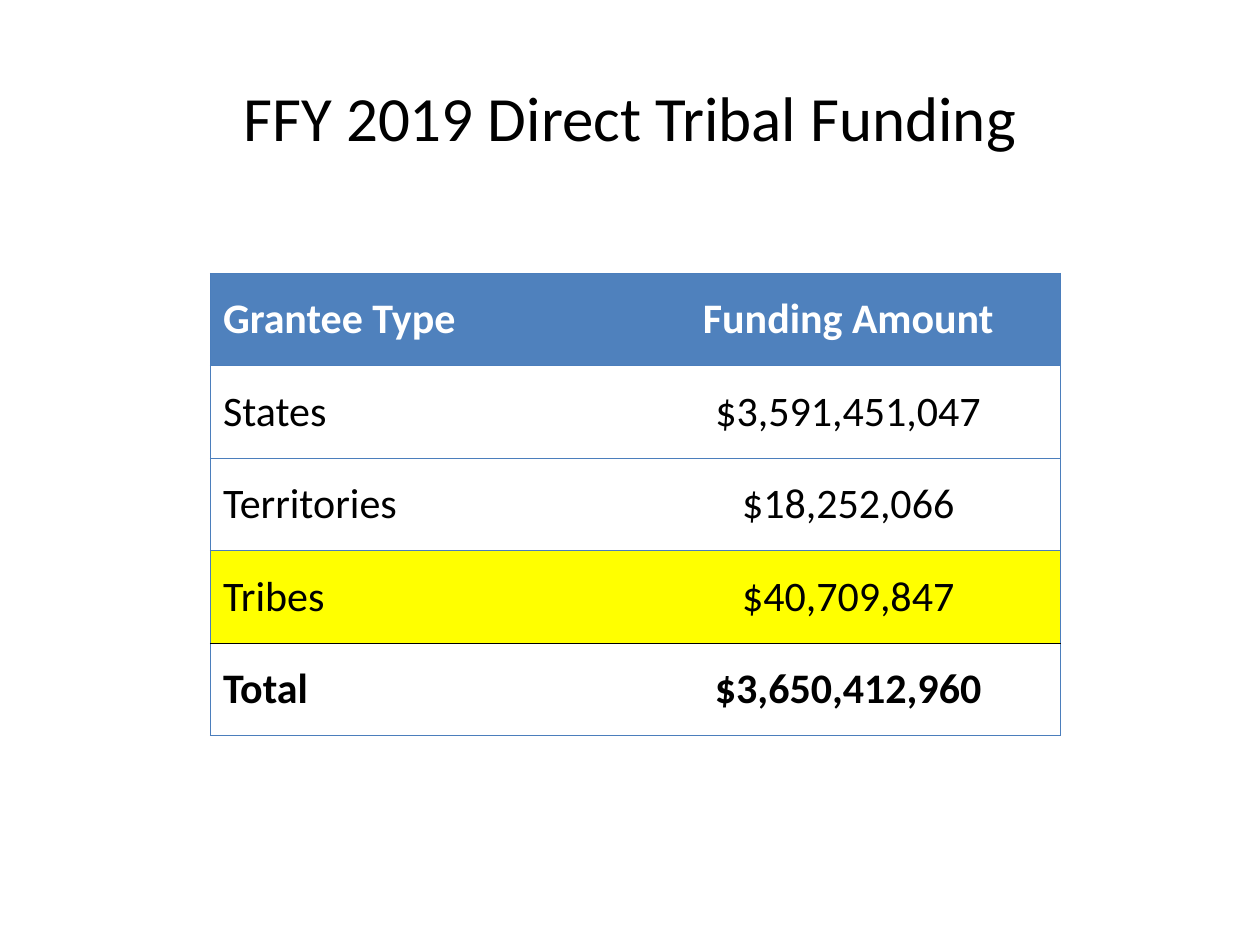
from pptx import Presentation
from pptx import util as u
from pptx.dml import color
from pptx.enum import text
from pptx.oxml import ns, xmlchemy

COLORS = {"header": "4F81BD", "border": "4B7EBC", "tribes": "FFFF00",
          "ink": "000000", "white": "FFFFFF"}
ROWS = [("Grantee Type", "Funding Amount"),
        ("States", "$3,591,451,047"),
        ("Territories", "$18,252,066"),
        ("Tribes", "$40,709,847"),
        ("Total", "$3,650,412,960")]
HEADER, TRIBES, TOTAL = 0, 3, 4
ALIGNS = (text.PP_ALIGN.LEFT, text.PP_ALIGN.CENTER)
NO_STYLE = "{2D5ABB26-0587-4C30-8999-92F81FD0307C}"


def rgb(name):
    """Return the named colour."""
    return color.RGBColor.from_string(COLORS[name])


def write(tf, words, size, ink="ink", bold=False, align=text.PP_ALIGN.CENTER):
    """Write one formatted paragraph in a text frame."""
    p = tf.paragraphs[0]
    p.alignment = align
    r = p.add_run()
    r.text = words
    for key, value in {"name": "Calibri", "size": u.Pt(size), "bold": bold}.items():
        setattr(r.font, key, value)
    r.font.color.rgb = rgb(ink)


def add_title(s, words):
    """Add the centred slide title."""
    box = s.shapes.add_textbox(u.Inches(0.5), u.Inches(0.3), u.Inches(9), u.Inches(1.25))
    tf = box.text_frame
    tf.word_wrap = True
    tf.vertical_anchor = text.MSO_ANCHOR.MIDDLE
    write(tf, words, 36)


def set_border(cell, side, name, points):
    """Draw one side of a cell."""
    ln = xmlchemy.OxmlElement(f"a:ln{side}")
    ln.set("w", str(u.Pt(points)))
    fill = xmlchemy.OxmlElement("a:solidFill")
    clr = xmlchemy.OxmlElement("a:srgbClr")
    clr.set("val", COLORS[name])
    fill.append(clr)
    ln.append(fill)
    cell._tc.get_or_add_tcPr().append(ln)


def format_cell(cell, row, col):
    """Set the borders and fill of a cell from its place in the table."""
    black, blue = ("ink", 1), ("border", 0.75)
    set_border(cell, "R" if col else "L", *blue)
    set_border(cell, "T", *(black if row == TOTAL else blue))
    set_border(cell, "B", *(black if row == TRIBES else blue))
    fill = {HEADER: "header", TRIBES: "tribes"}.get(row)
    if fill:
        cell.fill.solid()
        cell.fill.fore_color.rgb = rgb(fill)
    else:
        cell.fill.background()


def add_funding_table(s):
    """Add the table of funding by grantee type."""
    frame = s.shapes.add_table(len(ROWS), 2, u.Inches(1.67), u.Inches(2.17),
                               u.Inches(6.75), u.Inches(3.67))
    table = frame.table
    table.horz_banding = False
    table._tbl.tblPr.find(ns.qn("a:tableStyleId")).text = NO_STYLE
    for row, values in enumerate(ROWS):
        for col, value in enumerate(values):
            cell = table.cell(row, col)
            cell.vertical_anchor = text.MSO_ANCHOR.MIDDLE
            write(cell.text_frame, value, 24, "white" if row == HEADER else "ink",
                  row in (HEADER, TOTAL), ALIGNS[col])
            format_cell(cell, row, col)


def main():
    """Build and save the slide."""
    prs = Presentation()
    prs.slide_width, prs.slide_height = u.Inches(10), u.Inches(7.5)
    s = prs.slides.add_slide(prs.slide_layouts[6])
    add_title(s, "FFY 2019 Direct Tribal Funding")
    add_funding_table(s)
    prs.save("out.pptx")


if __name__ == "__main__":
    main()
